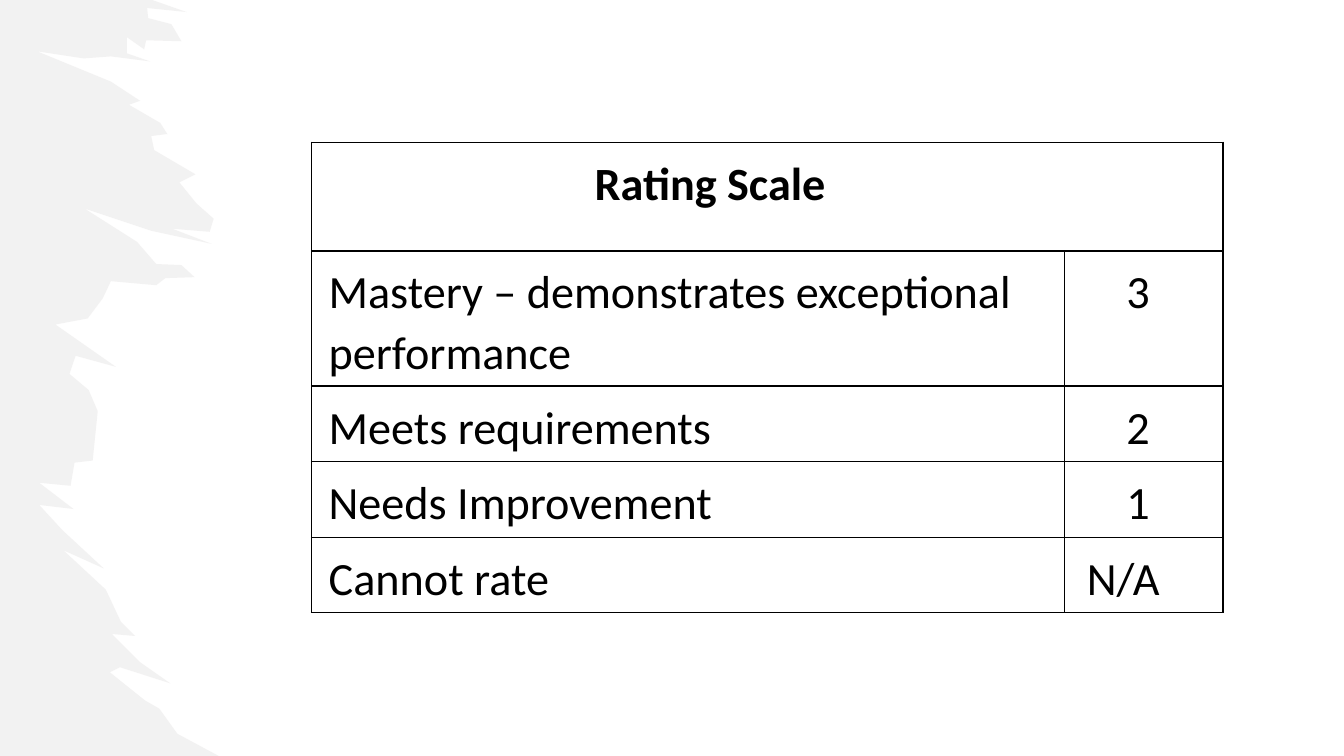
"""Build a rating scale slide with a torn brush edge on the left."""
import lxml.etree
import pptx
import pptx.dml.color
import pptx.enum.text
import pptx.oxml.ns
import pptx.util

INCH = pptx.util.Inches
ALIGN = pptx.enum.text.PP_ALIGN
HUES = {"ink": "000000", "brush": "E7E6E6"}
TITLE = "Rating Scale "
RATES = [
    ("Mastery – demonstrates exceptional performance", "3 "),
    ("Meets requirements", "2 "),
    ("Needs Improvement", "1 "),
    ("Cannot rate", "N/A"),
]
COLS = (7.47, 1.57)
ROWS = (1.08, 1.34, 0.75, 0.75, 0.75)
SPOT = (3.09, 1.41)
INDENT = {TITLE: 0.55, "N/A": 0.05}
INSET = {"margin_left": INCH(0.17), "margin_top": INCH(0.1),
         "margin_right": INCH(0.18), "margin_bottom": 0}
FONT = {"name": "Calibri", "size": pptx.util.Pt(33)}
PLAIN = {"first_row": False, "horz_banding": False}
EDGE = [
    (0, 0), (1.51, 0), (1.85, 0.12), (1.46, 0.08), (1.47, 0.18),
    (1.7, 0.24), (1.8, 0.41), (1.45, 0.4), (1.43, 0.49), (1.26, 0.37),
    (1.26, 0.53), (1.49, 0.61), (1.1, 0.56), (0.83, 0.58), (0.37, 0.51),
    (1.1, 0.81), (1.39, 1), (1.28, 1.04), (1.59, 1.22), (1.66, 1.33),
    (1.5, 1.35), (1.53, 1.49), (1.94, 1.73), (1.78, 1.81), (1.95, 2.02),
    (2.12, 2.17), (2.08, 2.3), (1.71, 2.27), (2.1, 2.42), (1.5, 2.29),
    (0.84, 2.07), (1.36, 2.4), (1.55, 2.62), (1.8, 2.63), (1.93, 2.75),
    (1.64, 2.76), (1.55, 2.83), (1.1, 2.79), (1.02, 2.96), (0.87, 3.16),
    (0.55, 3.22), (1.15, 3.64), (0.75, 3.53), (0.69, 3.71), (0.88, 3.87),
    (0.97, 4.08), (0.92, 4.57), (0.74, 4.59), (0.7, 4.82), (0.39, 4.79),
    (0.73, 5.05), (0.39, 5.01), (0.62, 5.26), (1.03, 5.64), (0.63, 5.46),
    (1.05, 5.85), (1.2, 6.17), (1.34, 6.31), (1.11, 6.29), (1.39, 6.57),
    (1.69, 6.78), (1.19, 6.62), (1.09, 6.67), (1.44, 6.95), (1.58, 7.03),
    (1.76, 7.28), (2.17, 7.5), (0, 7.5),
]


def paint(color, hue):
    color.rgb = pptx.dml.color.RGBColor.from_string(HUES[hue])


def apply(item, values):
    for name, value in values.items():
        setattr(item, name, value)


def add(node, tag, **values):
    return lxml.etree.SubElement(node, pptx.oxml.ns.qn(tag), values)


def draw_brush(slide):
    dots = [(INCH(x), INCH(y)) for x, y in EDGE]
    pen = slide.shapes.build_freeform(*dots[0])
    pen.add_line_segments(dots[1:])
    brush = pen.convert_to_shape()
    brush.shadow.inherit = False
    brush.line.fill.background()
    brush.fill.solid()
    paint(brush.fill.fore_color, "brush")
    tint = next(brush._element.spPr.iter(pptx.oxml.ns.qn("a:srgbClr")))
    add(tint, "a:alpha", val="50000")


def frame(cell, bare):
    props = cell._tc.get_or_add_tcPr()
    for side in "LRTB":
        line = add(props, "a:ln" + side, w="12700")
        if side == bare:
            add(line, "a:noFill")
        else:
            add(add(line, "a:solidFill"), "a:srgbClr", val=HUES["ink"])
    cell.fill.background()


def write(cell, text, bold, align):
    para = cell.text_frame.paragraphs[0]
    apply(para, {"alignment": align, "line_spacing": 1.07})
    if text in INDENT:
        para._p.get_or_add_pPr().set("marL", str(INCH(INDENT[text])))
    run = para.add_run()
    run.text = text
    apply(run.font, {**FONT, "bold": bold})
    paint(run.font.color, "ink")


def draw_table(slide):
    size = (sum(COLS), sum(ROWS))
    table = slide.shapes.add_table(
        len(ROWS), len(COLS), *map(INCH, SPOT + size)).table
    apply(table, PLAIN)
    for col, width in zip(table.columns, COLS):
        col.width = INCH(width)
    for row, height in zip(table.rows, ROWS):
        row.height = INCH(height)
    for r, texts in enumerate([(TITLE, "")] + RATES):
        for c, text in enumerate(texts):
            cell = table.cell(r, c)
            apply(cell, INSET)
            frame(cell, "RL"[c] if r == 0 else "")
            if text:
                mid = text == TITLE or (c == 1 and text != "N/A")
                write(cell, text, r == 0, ALIGN.CENTER if mid else ALIGN.LEFT)


def main():
    deck = pptx.Presentation()
    apply(deck, {"slide_width": INCH(13.33), "slide_height": INCH(7.5)})
    slide = deck.slides.add_slide(deck.slide_layouts[6])
    draw_brush(slide)
    draw_table(slide)
    deck.save("out.pptx")


if __name__ == "__main__":
    main()
